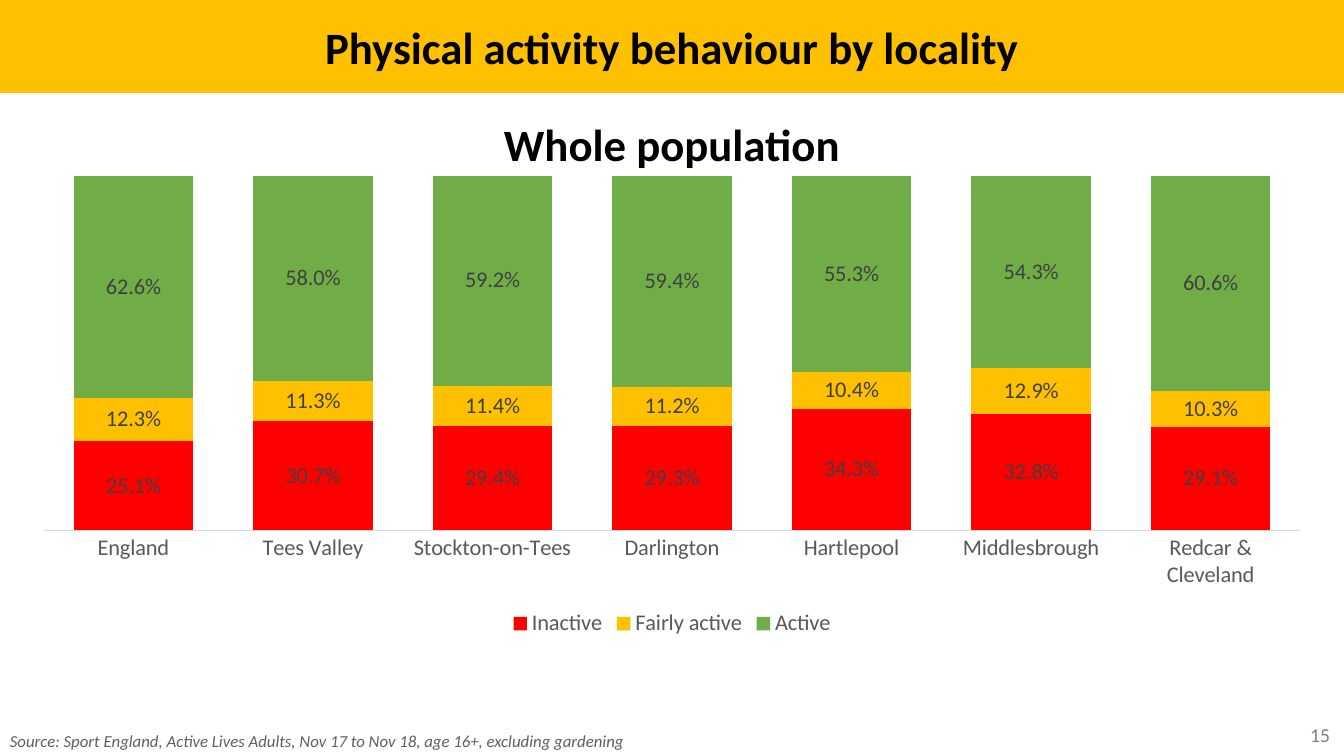
from dataclasses import dataclass

from pptx import Presentation
from pptx.chart.data import CategoryChartData as ChartData
from pptx.dml.color import RGBColor as RGB
from pptx.enum.chart import XL_CHART_TYPE as Kind, XL_LEGEND_POSITION as Legend
from pptx.enum.chart import XL_TICK_LABEL_POSITION as Label, XL_TICK_MARK as Tick
from pptx.enum.shapes import MSO_SHAPE as Shape
from pptx.enum.text import MSO_ANCHOR as Anchor, PP_ALIGN as Align
from pptx.util import Inches, Pt

WIDTH, HEIGHT = 13.33, 7.5


@dataclass(frozen=True)
class Theme:
    font: str = "Calibri"
    head: int = 32
    body: int = 16
    page: int = 14
    note: int = 12
    ink: str = "000000"
    amber: str = "FFC000"
    red: str = "FF0000"
    green: str = "70AD47"
    axis: str = "595959"
    value: str = "404040"
    rule: str = "D9D9D9"
    source: str = "5F5F5F"
    number: str = "808080"


class Deck:
    def __init__(self, theme):
        self.theme = theme
        self.prs = Presentation()
        self.prs.slide_width, self.prs.slide_height = Inches(WIDTH), Inches(HEIGHT)
        self.slide = self.prs.slides.add_slide(self.prs.slide_layouts[6])

    def place(self, left, top, width, height):
        """Turn shares of the slide's size into lengths."""
        wide, high = self.prs.slide_width, self.prs.slide_height
        return int(left * wide), int(top * high), int(width * wide), int(height * high)

    def style(self, font, size, color, bold=False, italic=False):
        font.name, font.size = self.theme.font, Pt(size)
        font.bold, font.italic = bold, italic
        font.color.rgb = RGB.from_string(color)

    def label(self, shape, text, size, color, align, anchor, **look):
        frame = shape.text_frame
        frame.text, frame.word_wrap = text, True
        frame.vertical_anchor = anchor
        para = frame.paragraphs[0]
        para.alignment = align
        self.style(para.runs[0].font, size, color, **look)

    def text(self, area, text, size, color, align=Align.LEFT, anchor=Anchor.TOP, **look):
        box = self.slide.shapes.add_textbox(*self.place(*area))
        self.label(box, text, size, color, align, anchor, **look)

    def banner(self, area, text):
        bar = self.slide.shapes.add_shape(Shape.RECTANGLE, *self.place(*area))
        bar.shadow.inherit = False
        bar.fill.solid()
        bar.fill.fore_color.rgb = RGB.from_string(self.theme.amber)
        bar.line.fill.background()
        self.label(bar, text, self.theme.head, self.theme.ink,
                   Align.CENTER, Anchor.MIDDLE, bold=True)

    def stack(self, area, places, groups):
        """Add stacked columns; groups maps each name to its colour and shares."""
        theme = self.theme
        data = ChartData(number_format="0.0%")
        data.categories = places
        for name, (_, shares) in groups.items():
            data.add_series(name, shares)
        chart = self.slide.shapes.add_chart(
            Kind.COLUMN_STACKED, *self.place(*area), data).chart
        self.style(chart.font, theme.body, theme.ink)
        chart.has_title = False
        chart.has_legend = True
        chart.legend.position = Legend.BOTTOM
        chart.legend.include_in_layout = False
        self.style(chart.legend.font, theme.body, theme.axis)

        scale = chart.value_axis
        scale.minimum_scale, scale.maximum_scale = 0, 1
        scale.has_major_gridlines = False
        scale.visible = False
        base = chart.category_axis
        base.major_tick_mark = base.minor_tick_mark = Tick.NONE
        base.tick_label_position = Label.NEXT_TO_AXIS
        base.format.line.color.rgb = RGB.from_string(theme.rule)
        base.format.line.width = Pt(0.75)
        self.style(base.tick_labels.font, theme.body, theme.axis)

        plot = chart.plots[0]
        plot.gap_width, plot.overlap = 50, 100
        plot.vary_by_categories = False
        for series, (color, _) in zip(plot.series, groups.values()):
            series.format.fill.solid()
            series.format.fill.fore_color.rgb = RGB.from_string(color)
            labels = series.data_labels
            labels.show_value = True
            labels.number_format = "0.0%"
            labels.number_format_is_linked = False
            self.style(labels.font, theme.body, theme.value)

    def save(self):
        self.prs.save("out.pptx")


def main():
    theme = Theme()
    deck = Deck(theme)
    deck.text((0.772, 0.945, 0.225, 0.053), "15", theme.page, theme.number,
              Align.RIGHT, Anchor.MIDDLE)
    deck.banner((0, 0, 1, 0.123), "Physical activity behaviour by locality")
    deck.text((0, 0.148, 1, 0.085), "Whole population", theme.head, theme.ink,
              Align.CENTER, bold=True)
    deck.text((0, 0.96, 0.748, 0.04),
              "Source: Sport England, Active Lives Adults, Nov 17 to Nov 18, "
              "age 16+, excluding gardening",
              theme.note, theme.source, italic=True)
    places = ["England", "Tees Valley", "Stockton-on-Tees", "Darlington",
              "Hartlepool", "Middlesbrough", "Redcar & Cleveland"]
    groups = {
        "Inactive": (theme.red, [0.251, 0.307, 0.294, 0.293, 0.343, 0.328, 0.291]),
        "Fairly active": (theme.amber, [0.123, 0.113, 0.114, 0.112, 0.104, 0.129, 0.103]),
        "Active": (theme.green, [0.626, 0.58, 0.592, 0.594, 0.553, 0.543, 0.606]),
    }
    deck.stack((0.013, 0.22, 0.974, 0.629), places, groups)
    deck.save()


if __name__ == "__main__":
    main()
